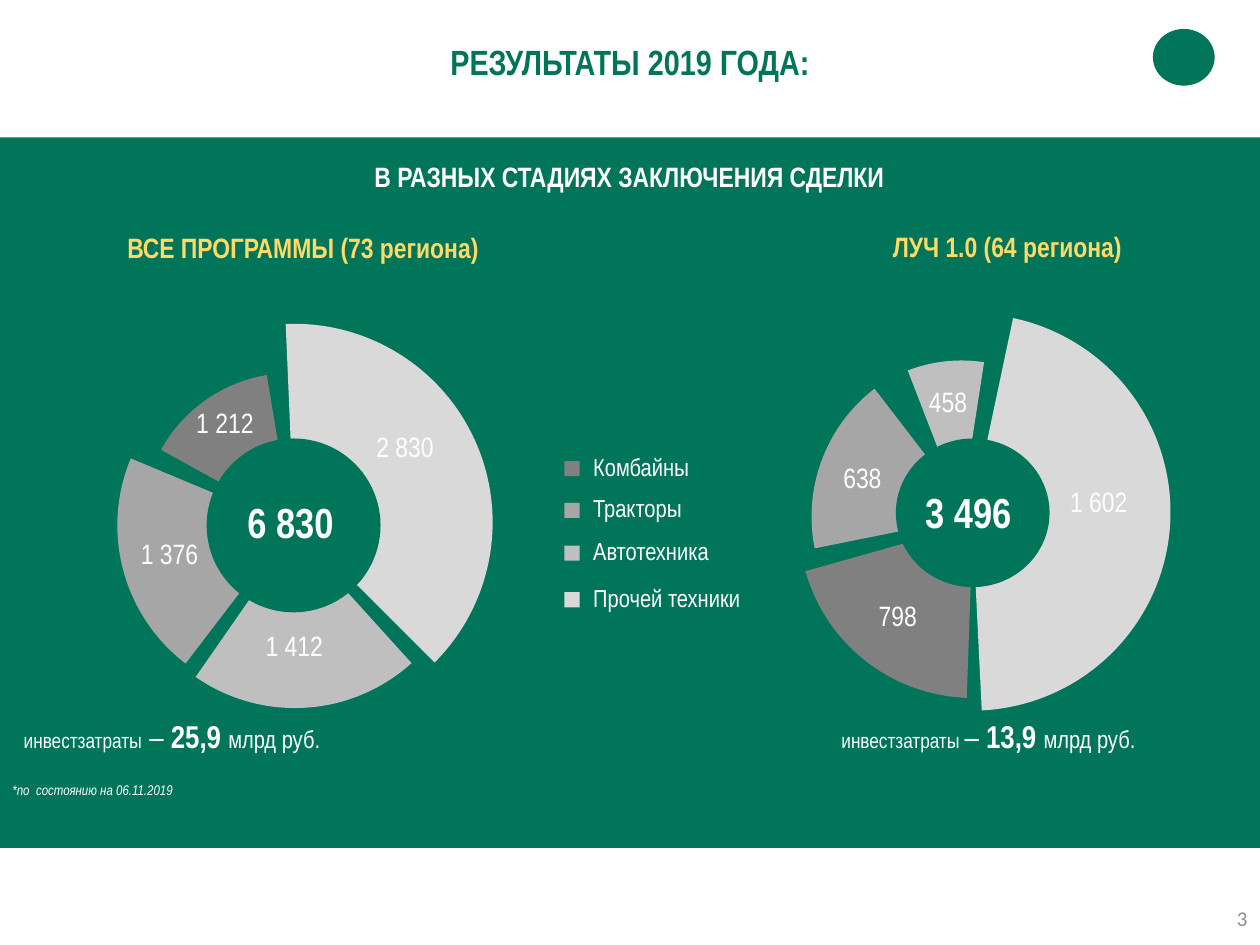
import pptx
import pptx.util
import pptx.dml.color
import pptx.enum.shapes
import pptx.enum.text

SHAPES = pptx.enum.shapes.MSO_SHAPE
ALIGN = pptx.enum.text.PP_ALIGN
ANCHOR = pptx.enum.text.MSO_ANCHOR

# All places and sizes are in square grid cells, 100 columns by 75 rows.
COLUMNS, ROWS = 100, 75
CELL = pptx.util.Inches(10) / COLUMNS

COLORS = {
    "green": "00755A", "white": "FFFFFF", "gold": "FFD966", "number": "8C8C8C",
    "combines": "808080", "tractors": "A6A6A6", "trucks": "BFBFBF", "other": "D9D9D9",
}

# category, label, swatch top
LEGEND = [
    ("combines", "Комбайны", 36.6),
    ("tractors", "Тракторы", 39.9),
    ("trucks", "Автотехника", 43.3),
    ("other", "Прочей техники", 47),
]
LEGEND_LEFT, SWATCH_SIZE = 44.8, 1.2

# sector: category, left, top, diameter, rotation, start and end angle in degrees
# value: text, left, top
RINGS = [
    {
        "heading": ("ВСЕ ПРОГРАММЫ (73 региона)", (5.6, 17.8, 36.9, 3.7)),
        "sectors": [
            ("other", 7.6, 25.7, 31.5, 274, 353.55, 130.96),
            ("trucks", 9.6, 28.6, 27.6, 54.3, 353.55, 70.48),
            ("tractors", 9.3, 27.9, 27.6, 132.2, 355.22, 70.48),
            ("combines", 11.3, 29.6, 23.6, 190.1, 18.84, 70.48),
        ],
        "hole": (16.4, 34.8, 13.8, 13.8),
        "total": ("6 830", (18.4, 38.9, 9.3, 5)),
        "values": [("1 412", 18.7, 49.4), ("2 830", 27.5, 33.6),
                   ("1 376", 8.8, 42.1), ("1 212", 13.2, 31.7)],
        "costs": (("инвестзатраты", " – ", "25,9 "), (0.9, 56.4, 32.4, 4)),
    },
    {
        "heading": ("ЛУЧ 1.0 (64 региона)", (64.6, 17.7, 30.7, 3.7)),
        "sectors": [
            ("other", 61.4, 24.9, 31.5, 274, 7.94, 173.2),
            ("combines", 63.4, 27.8, 27.6, 93.8, 358.2, 70.48),
            ("tractors", 64.4, 28.2, 25.6, 135.9, 32.73, 96.56),
            ("trucks", 64.5, 28.6, 23.6, 208.3, 40.54, 70.48),
        ],
        "hole": (71.1, 34.8, 12.2, 11.8),
        "total": ("3 496", (72.2, 38.1, 9.3, 5)),
        "values": [("798", 66.6, 47), (" 1 602", 82.3, 37.9),
                   ("638", 63.8, 36), ("458", 70.6, 30)],
        "costs": (("инвестзатраты ", "– ", "13,9 "), (65.8, 56.4, 34.3, 4)),
    },
]


def cells(*lengths):
    return [pptx.util.Emu(round(length * CELL)) for length in lengths]


def rgb(color):
    return pptx.dml.color.RGBColor.from_string(COLORS[color])


def add_plain_shape(slide, kind, box, color):
    shape = slide.shapes.add_shape(kind, *cells(*box))
    shape.shadow.inherit = False
    shape.fill.solid()
    shape.fill.fore_color.rgb = rgb(color)
    shape.line.fill.background()
    return shape


def add_sector(slide, color, left, top, diameter, rotation, start, end):
    sector = add_plain_shape(slide, SHAPES.PIE, (left, top, diameter, diameter), color)
    sector.rotation = rotation
    for index, angle in enumerate((start, end)):
        sector.adjustments[index] = angle * 0.6  # 60000 units per degree, over 100000


def add_text(slide, box, runs, align=ALIGN.CENTER, anchor=ANCHOR.TOP, color="white",
             font="Arial Narrow", italic=False, wrap=True, space_after=0):
    """Add a one-paragraph text box; each run is (text, size, bold)."""
    frame = slide.shapes.add_textbox(*cells(*box)).text_frame
    frame.word_wrap = wrap
    frame.vertical_anchor = anchor
    paragraph = frame.paragraphs[0]
    paragraph.alignment = align
    paragraph.space_after = pptx.util.Pt(space_after)
    for text, size, bold in runs:
        run = paragraph.add_run()
        run.text = text
        run.font.name = font
        run.font.size = pptx.util.Pt(size)
        run.font.bold = bold
        run.font.italic = italic
        run.font.color.rgb = rgb(color)


def add_ring(slide, ring):
    for sector in ring["sectors"]:
        add_sector(slide, *sector)
    add_plain_shape(slide, SHAPES.OVAL, ring["hole"], "green")
    total, box = ring["total"]
    add_text(slide, box, [(total, 24, True)], anchor=ANCHOR.MIDDLE)
    for value, left, top in ring["values"]:
        add_text(slide, (left, top, 9.3, 3.7), [(value, 16, False)], anchor=ANCHOR.MIDDLE)
    heading, box = ring["heading"]
    add_text(slide, box, [(heading, 16, True)], color="gold")
    (caption, dash, amount), box = ring["costs"]
    add_text(slide, box, [(caption, 12, False), (dash, 18, False), (amount, 18, True),
                          ("млрд руб.", 14, False)], align=ALIGN.LEFT)


def add_legend(slide):
    for category, label, top in LEGEND:
        add_plain_shape(slide, SHAPES.RECTANGLE,
                        (LEGEND_LEFT, top, SWATCH_SIZE, SWATCH_SIZE), category)
        add_text(slide, (LEGEND_LEFT + 1.3, top - 1.25, 15.7, 3.4),
                 [(label, 14, False)], align=ALIGN.LEFT)


def main():
    presentation = pptx.Presentation()
    presentation.slide_width, presentation.slide_height = cells(COLUMNS, ROWS)
    slide = presentation.slides.add_slide(presentation.slide_layouts[6])

    add_plain_shape(slide, SHAPES.RECTANGLE, (-0.3, 10.9, 100.3, 56.4), "green")
    add_text(slide, (34.2, 2.7, 31.6, 4.4), [("РЕЗУЛЬТАТЫ 2019 ГОДА:", 20, True)],
             color="green", wrap=False, space_after=9)
    add_text(slide, (-0.1, 12.2, 100.1, 3.7),
             [("В РАЗНЫХ СТАДИЯХ ЗАКЛЮЧЕНИЯ СДЕЛКИ", 16, True)])
    for ring in RINGS:
        add_ring(slide, ring)
    add_legend(slide)
    add_plain_shape(slide, SHAPES.OVAL, (91.5, 2.3, 4.9, 4.5), "green")
    add_text(slide, (0, 61.5, 90.9, 2.4), [("*по  состоянию на 06.11.2019", 8, False)],
             align=ALIGN.JUSTIFY, italic=True)
    add_text(slide, (77.5, 70.9, 22.5, 4), [("3", 12, False)], align=ALIGN.RIGHT,
             anchor=ANCHOR.MIDDLE, color="number", font="Calibri")
    presentation.save("out.pptx")


if __name__ == "__main__":
    main()
